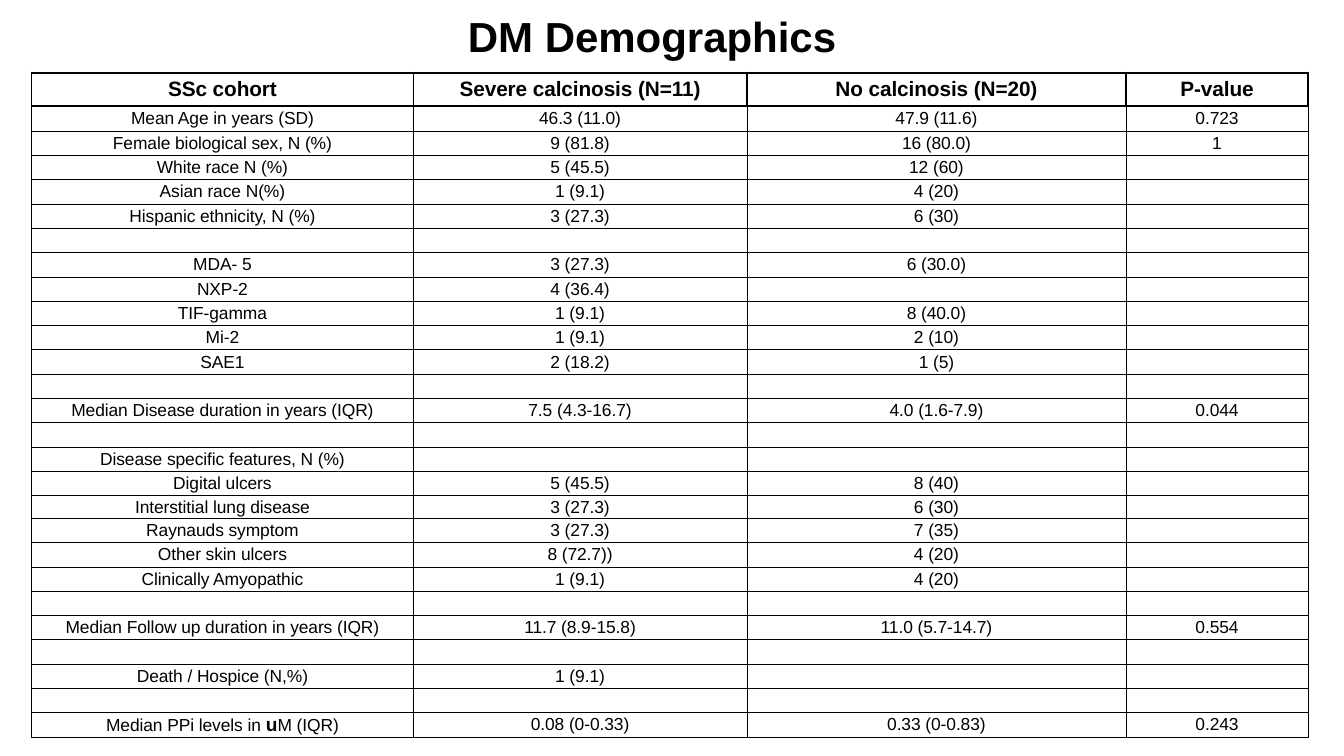
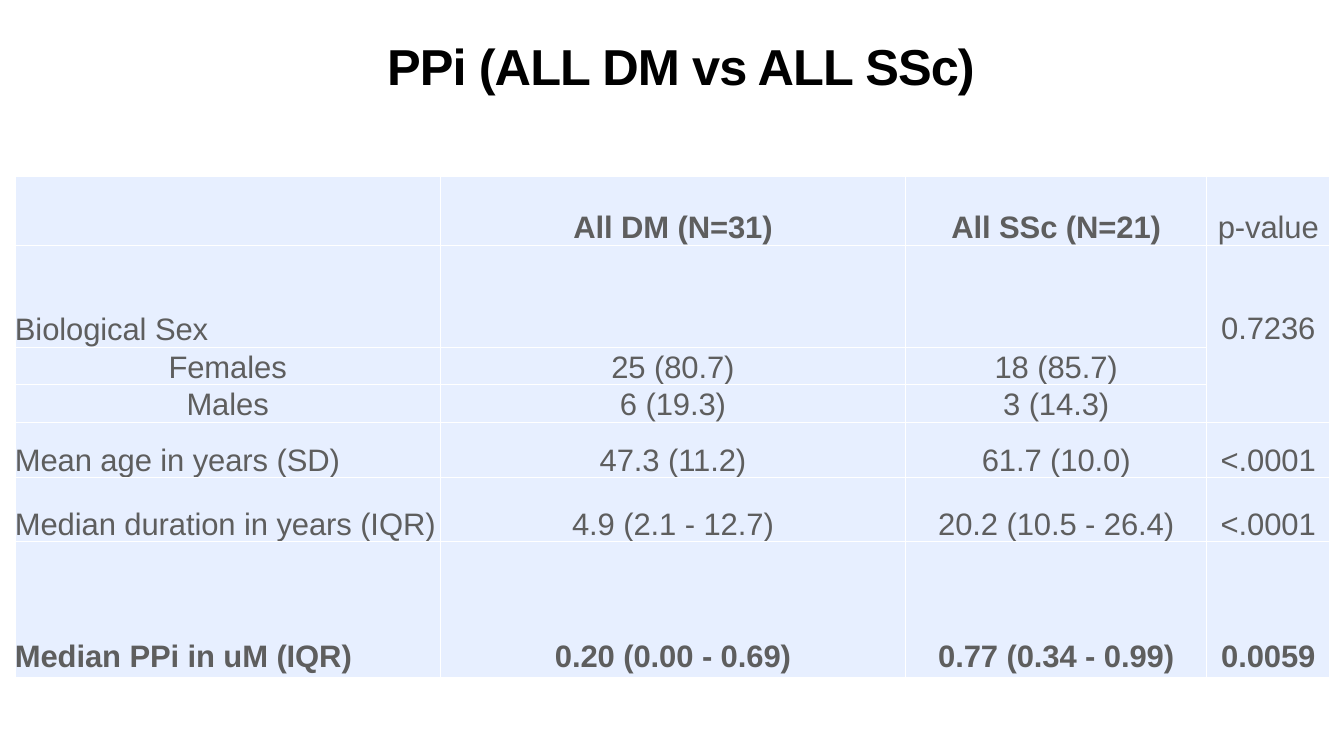
from lxml import etree
from pptx import Presentation
from pptx.dml.color import RGBColor
from pptx.enum import text
from pptx.oxml.ns import qn
from pptx.util import Cm, Pt

FONT = "Arial"
BLACK, GREY, WHITE, PALE_BLUE = "000000", "5E5E5E", "FFFFFF", "E7EFFF"
LEFT, CENTER = text.PP_ALIGN.LEFT, text.PP_ALIGN.CENTER
MIDDLE, BOTTOM = text.MSO_ANCHOR.MIDDLE, text.MSO_ANCHOR.BOTTOM

DEMOGRAPHICS = [
    ["SSc cohort", "Severe calcinosis (N=11)", "No calcinosis (N=20)", "P-value"],
    ["Mean Age in years (SD)", "46.3 (11.0)", "47.9 (11.6)", "0.723"],
    ["Female biological sex, N (%)", "9 (81.8)", "16 (80.0)", "1"],
    ["White race N (%)", "5 (45.5)", "12 (60)"],
    ["Asian race N(%)", "1 (9.1)", "4 (20)"],
    ["Hispanic ethnicity, N (%)", "3 (27.3)", "6 (30)"],
    [],
    ["MDA- 5", "3 (27.3)", "6 (30.0)"],
    ["NXP-2", "4 (36.4)"],
    ["TIF-gamma", "1 (9.1)", "8 (40.0)"],
    ["Mi-2", "1 (9.1)", "2 (10)"],
    ["SAE1", "2 (18.2)", "1 (5)"],
    [],
    ["Median Disease duration in years (IQR)", "7.5 (4.3-16.7)", "4.0 (1.6-7.9)", "0.044"],
    [],
    ["Disease specific features, N (%)"],
    ["Digital ulcers", "5 (45.5)", "8 (40)"],
    ["Interstitial lung disease", "3 (27.3)", "6 (30)"],
    ["Raynauds symptom", "3 (27.3)", "7 (35)"],
    ["Other skin ulcers", "8 (72.7))", "4 (20)"],
    ["Clinically Amyopathic", "1 (9.1)", "4 (20)"],
    [],
    ["Median Follow up duration in years (IQR)", "11.7 (8.9-15.8)", "11.0 (5.7-14.7)", "0.554"],
    [],
    ["Death / Hospice (N,%)", "1 (9.1)"],
    [],
    ["Median PPi levels in |u|M (IQR)", "0.08 (0-0.33)", "0.33 (0-0.83)", "0.243"],
]

PPI = [
    ["", "All DM (N=31)", "All SSc (N=21)", "p-value"],
    ["Biological Sex", "", "", "0.7236"],
    ["Females", "25 (80.7)", "18 (85.7)"],
    ["Males", "6 (19.3)", "3 (14.3)"],
    ["Mean age in years (SD)", "47.3 (11.2)", "61.7 (10.0)", "<.0001"],
    ["Median duration in years (IQR)", "4.9 (2.1 - 12.7)", "20.2 (10.5 - 26.4)", "<.0001"],
    ["Median PPi in uM (IQR)", "0.20 (0.00 - 0.69)", "0.77 (0.34 - 0.99)", "0.0059"],
]


def rgb(color):
    return RGBColor.from_string(color)


def write(p, content, size, color, bold=False, align=CENTER, spacing=0):
    """Fill a paragraph; "|" separates runs, spacing is in points."""
    p.alignment = align
    for part in content.split("|") if content else []:
        r = p.add_run()
        r.text = part
        r.font.name, r.font.size, r.font.bold = FONT, Pt(size), bold
        r.font.color.rgb = rgb(color)
        r.font._element.set("spc", str(round(spacing * 100)))


def no_margins(box):
    box.margin_left = box.margin_top = box.margin_right = box.margin_bottom = 0


def add_title(slide, content, size, center_x, center_y, spacing=0):
    w, h = 30, 2.6
    tf = slide.shapes.add_textbox(Cm(center_x - w / 2), Cm(center_y - h / 2), Cm(w), Cm(h)).text_frame
    tf.word_wrap = True
    tf.vertical_anchor = MIDDLE
    no_margins(tf)
    write(tf.paragraphs[0], content, size, BLACK, True, spacing=spacing)


def set_border(cell, side, color, width):
    tag = qn(f"a:ln{side}")
    tc_pr = cell._tc.get_or_add_tcPr()
    ln = etree.SubElement(tc_pr, tag, w=str(Pt(width)))
    fill = etree.SubElement(ln, qn("a:solidFill"))
    etree.SubElement(fill, qn("a:srgbClr"), val=color)


def add_table(slide, left, top, widths, heights, rows, cell_style, borders, border_color, fill=None):
    """cell_style(row, col) gives text options; borders(row, col) gives L, R, T, B widths."""
    table = slide.shapes.add_table(len(heights), len(widths), Cm(left), Cm(top),
                                   Cm(sum(widths)), Cm(sum(heights))).table
    table.first_row = table.horz_banding = False
    for column, width in zip(table.columns, widths):
        column.width = Cm(width)
    for i, (row, height) in enumerate(zip(rows, heights)):
        table.rows[i].height = Cm(height)
        for j in range(len(widths)):
            cell = table.cell(i, j)
            no_margins(cell)
            cell.vertical_anchor = MIDDLE
            for side, width in zip("LRTB", borders(i, j)):
                set_border(cell, side, border_color, width)
            if fill:
                cell.fill.solid()
                cell.fill.fore_color.rgb = rgb(fill)
            else:
                cell.fill.background()
            content = row[j] if j < len(row) else ""
            write(cell.text_frame.paragraphs[0], content, spacing=-0.1, **cell_style(i, j))
    return table


def demographics_slide(slide):
    add_title(slide, "DM Demographics", 49.5, 27.1, 1.5)

    def style(i, j):
        return dict(size=20.5 if i else 24.5, color=BLACK, bold=i == 0)

    def borders(i, j):
        if i == 0:
            verticals = [1, 1, 2.25, 2.25, 2.25]
            return verticals[j], verticals[j + 1], 3, 3
        return 1, 1, 3 if i == 1 else 1, 1

    heights = [1.37, 1.06] + [1.01] * (len(DEMOGRAPHICS) - 2)
    heights[17] = 0.94
    table = add_table(slide, 1.32, 3.02, [15.85, 13.87, 15.75, 7.57], heights,
                      DEMOGRAPHICS, style, borders, BLACK)
    # Emphasised unit prefix in the last row
    unit = table.cell(len(DEMOGRAPHICS) - 1, 0).text_frame.paragraphs[0].runs[1]
    unit.font.size, unit.font.bold = Pt(22.5), True


def ppi_slide(slide):
    add_title(slide, "PPi (ALL DM vs ALL SSc)", 59.5, 28.3, 2.7, spacing=-1.1)
    last = len(PPI) - 1

    def style(i, j):
        indented = i in (2, 3)
        return dict(size=36.5, color=GREY,
                    bold=i == last or (i == 0 and j < 3),
                    align=CENTER if j or indented else LEFT)

    table = add_table(slide, 0.62, 7.34, [17.68, 19.33, 12.52, 5.11],
                      [2.84, 4.24, 1.57, 1.57, 2.29, 2.67, 5.64],
                      PPI, style, lambda i, j: (1, 1, 1, 1), WHITE, PALE_BLUE)
    for cell in table.iter_cells():
        cell.vertical_anchor = BOTTOM
    for j in range(4):
        table.cell(last, j).margin_bottom = Cm(0.15)
    # One p-value for the whole sex block
    sex_p = table.cell(1, 3)
    sex_p.merge(table.cell(3, 3))
    sex_p.vertical_anchor = MIDDLE
    sex_p.margin_bottom = Cm(0.4)


def main():
    prs = Presentation()
    prs.slide_width, prs.slide_height = Cm(55.85), Cm(31.42)
    for build in (demographics_slide, ppi_slide):
        build(prs.slides.add_slide(prs.slide_layouts[6]))
    prs.save("out.pptx")


if __name__ == "__main__":
    main()
